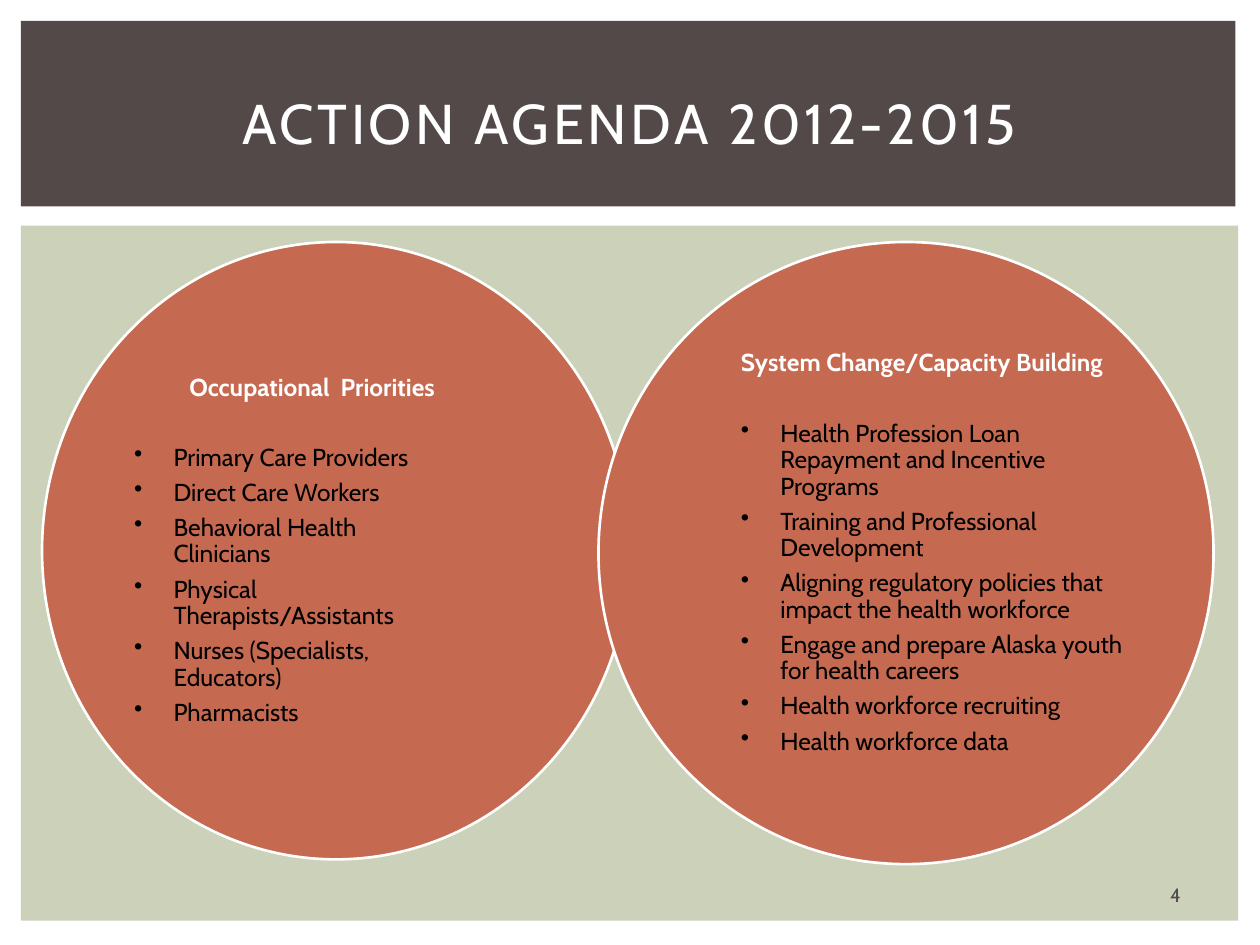
from dataclasses import dataclass

from lxml import etree
from pptx import Presentation
from pptx.dml.color import RGBColor
from pptx.enum.shapes import MSO_SHAPE
from pptx.enum.text import MSO_ANCHOR, PP_ALIGN
from pptx.oxml.ns import qn
from pptx.util import Pt

RECT, OVAL = MSO_SHAPE.RECTANGLE, MSO_SHAPE.OVAL
MIDDLE = MSO_ANCHOR.MIDDLE
LEFT, CENTER = PP_ALIGN.LEFT, PP_ALIGN.CENTER

FONT = "Cabin"
COLORS = {
    "sage": "CCD1B9",
    "brown": "534949",
    "rust": "C66951",
    "white": "FFFFFF",
    "black": "000000",
}
BODY_SIZE = 14
ITEM_GAP = 4.9
HEADING_GAP = 25
BULLET_INDENT = 22.5


@dataclass
class Box:
    left: float
    top: float
    width: float
    height: float

    def lengths(self) -> list:
        return [Pt(v) for v in (self.left, self.top, self.width, self.height)]


@dataclass
class Circle:
    box: Box
    margin_left: float
    margin_right: float
    heading: str
    heading_indent: float
    items: list[str]


CIRCLES = [
    Circle(Box(24, 138.3, 336, 352.8), 3.5, 57.3, "Occupational  Priorities", 31.5, [
        "Primary Care Providers",
        "Direct Care Workers",
        "Behavioral Health Clinicians",
        "Physical Therapists/Assistants",
        "Nurses (Specialists, Educators)",
        "Pharmacists",
    ]),
    Circle(Box(342, 138.3, 351.5, 355.5), 30, 0, "System Change/Capacity Building", 0, [
        "Health Profession Loan Repayment and Incentive Programs",
        "Training and Professional Development",
        "Aligning regulatory policies that impact the health workforce",
        "Engage and prepare Alaska youth for health careers",
        "Health workforce recruiting",
        "Health workforce data",
    ]),
]


def rgb(name: str) -> RGBColor:
    return RGBColor.from_string(COLORS[name])


def write(p, text: str, *, size: float = BODY_SIZE, color: str = "black",
          bold: bool = False, align=LEFT, tracking: float = 0,
          line: float = 1.0, after: float = 0, indent: float = 0,
          bullet: bool = False) -> None:
    p.alignment, p.line_spacing, p.space_after = align, line, Pt(after)
    p_pr = p._p.get_or_add_pPr()
    p_pr.set("marL", str(int(Pt(indent))))
    p_pr.set("indent", str(-int(Pt(indent)) if bullet else 0))
    if bullet:
        etree.SubElement(p_pr, qn("a:buChar")).set("char", "•")
    r = p.add_run()
    r.text = text
    r.font.name, r.font.size, r.font.bold = FONT, Pt(size), bold
    r.font.color.rgb = rgb(color)
    if tracking:
        r._r.get_or_add_rPr().set("spc", str(int(tracking * 100)))


def add_filled(s, kind, box: Box, color: str):
    sp = s.shapes.add_shape(kind, *box.lengths())
    sp.shadow.inherit = False
    sp.fill.solid()
    sp.fill.fore_color.rgb = rgb(color)
    sp.line.fill.background()
    return sp


def add_label(s, box: Box, text: str, **style) -> None:
    tf = s.shapes.add_textbox(*box.lengths()).text_frame
    tf.word_wrap, tf.vertical_anchor = True, MIDDLE
    write(tf.paragraphs[0], text, align=CENTER, **style)


def add_circle(s, circle: Circle) -> None:
    sp = add_filled(s, OVAL, circle.box, "rust")
    sp.line.color.rgb, sp.line.width = rgb("white"), Pt(1.5)
    tf = sp.text_frame
    tf.word_wrap, tf.vertical_anchor = True, MIDDLE
    tf.margin_left, tf.margin_right = Pt(circle.margin_left), Pt(circle.margin_right)
    tf.margin_top = tf.margin_bottom = Pt(0)
    write(tf.paragraphs[0], circle.heading, color="white", bold=True, line=0.9,
          after=HEADING_GAP, indent=circle.heading_indent)
    for item in circle.items:
        write(tf.add_paragraph(), item, line=0.9, after=ITEM_GAP,
              indent=BULLET_INDENT, bullet=True)


def main() -> None:
    """Build the action agenda slide."""
    prs = Presentation()
    prs.slide_width, prs.slide_height = Pt(720), Pt(540)
    s = prs.slides.add_slide(prs.slide_layouts[6])
    add_filled(s, RECT, Box(12, 129, 695.5, 397.2), "sage")
    add_filled(s, RECT, Box(12, 12, 694, 106), "brown")
    add_label(s, Box(648.7, 500.4, 46, 21.6), "4", size=11, color="brown")
    add_label(s, Box(30, 28, 660, 83), "ACTION AGENDA 2012-2015",
              size=32, color="white", tracking=2)
    for circle in CIRCLES:
        add_circle(s, circle)
    prs.save("out.pptx")


if __name__ == "__main__":
    main()
